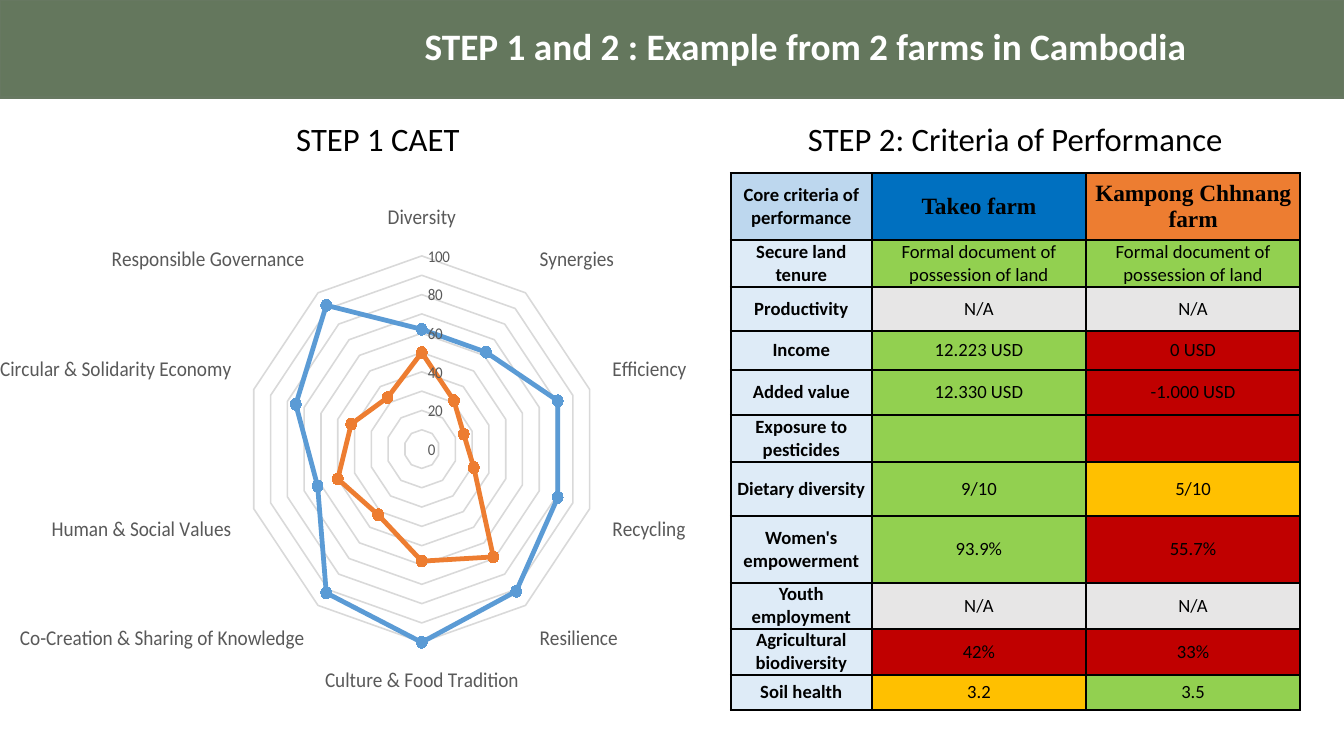
from dataclasses import dataclass

from lxml import etree
from pptx import Presentation
from pptx import util as u
from pptx.chart import data as chart_data
from pptx.dml.color import RGBColor
from pptx.enum import chart as charts, shapes, text
from pptx.oxml import parse_xml
from pptx.oxml.ns import nsdecls, qn


@dataclass(frozen=True)
class Theme:
    font: str = "Calibri"
    farm_font: str = "Times New Roman"
    title: float = 16
    heading: float = 14
    farm: float = 10
    cell: float = 8
    category: float = 9
    scale: float = 7
    banner: str = "64775D"
    banner_edge: str = "677861"
    white: str = "FFFFFF"
    black: str = "000000"
    label: str = "595959"
    grid: str = "D9D9D9"
    blue: str = "5B9BD5"
    orange: str = "ED7D31"
    corner: str = "BDD7EE"
    criterion: str = "DEEBF7"
    takeo: str = "0070C0"
    good: str = "92D050"
    medium: str = "FFC000"
    poor: str = "C00000"
    missing: str = "E7E6E6"


THEME = Theme()
COLUMNS, ROWS = 80, 45
CELL = u.Inches(0.1)

CRITERIA = [
    ("Secure land tenure", 2.8, "Formal document of possession of land", THEME.good,
     "Formal document of possession of land", THEME.good),
    ("Productivity", 2.6, "N/A", THEME.missing, "N/A", THEME.missing),
    ("Income", 2.3, "12.223 USD", THEME.good, "0 USD", THEME.poor),
    ("Added value", 2.7, "12.330 USD", THEME.good, "-1.000 USD", THEME.poor),
    ("Exposure to pesticides", 2.8, "", THEME.good, "", THEME.poor),
    ("Dietary diversity", 3.2, "9/10", THEME.good, "5/10", THEME.medium),
    ("Women's empowerment", 4, "93.9%", THEME.good, "55.7%", THEME.poor),
    ("Youth employment", 2.5, "N/A", THEME.missing, "N/A", THEME.missing),
    ("Agricultural biodiversity", 2.6, "42%", THEME.poor, "33%", THEME.poor),
    ("Soil health", 2.1, "3.2", THEME.medium, "3.5", THEME.good),
]

CAET = {
    "Diversity": (62, 50),
    "Synergies": (62, 31),
    "Efficiency": (81, 25),
    "Recycling": (81, 31),
    "Resilience": (91, 69),
    "Culture & Food Tradition": (100, 58),
    "Co-Creation & Sharing of Knowledge": (92, 42),
    "Human & Social Values": (62, 50),
    "Circular & Solidarity Economy": (75, 42),
    "Responsible Governance": (92, 33),
}


def grid(*steps):
    return [int(step * CELL) for step in steps]


def rgb(value):
    return RGBColor.from_string(value)


def paint(fill, color):
    fill.solid()
    fill.fore_color.rgb = rgb(color)


def stroke(line, color, width):
    line.color.rgb = rgb(color)
    line.width = u.Pt(width)


def style(font, size, color, bold=False, name=THEME.font):
    font.name, font.size, font.bold = name, u.Pt(size), bold
    font.color.rgb = rgb(color)


def add_banner(page):
    banner = page.shapes.add_shape(shapes.MSO_SHAPE.RECTANGLE, *grid(0, 0, COLUMNS, 5.8))
    banner.shadow.inherit = False
    paint(banner.fill, THEME.banner)
    stroke(banner.line, THEME.banner_edge, 1)


def add_label(page, place, words, size, color, bold=False, centered=False):
    box = page.shapes.add_textbox(*grid(*place))
    frame = box.text_frame
    frame.word_wrap = not centered
    frame.text = words
    para = frame.paragraphs[0]
    if centered:
        para.alignment = text.PP_ALIGN.CENTER
    style(para.runs[0].font, size, color, bold)


def add_borders(cell):
    props = cell._tc.get_or_add_tcPr()
    for side in ("lnL", "lnR", "lnT", "lnB"):
        edge = etree.SubElement(props, qn(f"a:{side}"), w=str(u.Pt(1)))
        fill = etree.SubElement(edge, qn("a:solidFill"))
        etree.SubElement(fill, qn("a:srgbClr"), val=THEME.black)


def fill_cell(cell, words, color, size=THEME.cell, bold=False, name=THEME.font):
    add_borders(cell)
    paint(cell.fill, color)
    cell.margin_left = cell.margin_right = u.Inches(0.01)
    cell.margin_top = cell.margin_bottom = 0
    cell.vertical_anchor = text.MSO_ANCHOR.MIDDLE
    cell.text = words
    para = cell.text_frame.paragraphs[0]
    para.alignment = text.PP_ALIGN.CENTER
    para._p.get_or_add_endParaRPr().set("sz", str(size * 100))
    for span in para.runs:
        style(span.font, size, THEME.black, bold, name)


def add_criteria_table(page):
    widths = grid(8.4, 12.75, 12.75)
    heights = grid(4, *(row[1] for row in CRITERIA))
    table = page.shapes.add_table(len(heights), len(widths), *grid(43.5, 10.3),
                                  sum(widths), sum(heights)).table
    for column, width in zip(table.columns, widths):
        column.width = width
    for row, height in zip(table.rows, heights):
        row.height = height
    fill_cell(table.cell(0, 0), "Core criteria of performance", THEME.corner, bold=True)
    farms = [("Takeo farm", THEME.takeo), ("Kampong Chhnang farm", THEME.orange)]
    for column, (farm, color) in enumerate(farms, 1):
        fill_cell(table.cell(0, column), farm, color, THEME.farm, True, THEME.farm_font)
    for row, (name, _, takeo, takeo_color, kampong, kampong_color) in enumerate(CRITERIA, 1):
        fill_cell(table.cell(row, 0), name, THEME.criterion, bold=True)
        fill_cell(table.cell(row, 1), takeo, takeo_color)
        fill_cell(table.cell(row, 2), kampong, kampong_color)


def place_plot(chart, left, top, width, height):
    area = chart._chartSpace.chart.plotArea
    for old in area.findall(qn("c:layout")):
        area.remove(old)
    area.insert(0, parse_xml(
        f'<c:layout {nsdecls("c")}><c:manualLayout><c:layoutTarget val="inner"/>'
        '<c:xMode val="edge"/><c:yMode val="edge"/>'
        f'<c:x val="{left}"/><c:y val="{top}"/><c:w val="{width}"/><c:h val="{height}"/>'
        '</c:manualLayout></c:layout>'))


def style_axes(chart):
    categories, scale = chart.category_axis, chart.value_axis
    for axis, size in ((categories, THEME.category), (scale, THEME.scale)):
        axis.major_tick_mark = axis.minor_tick_mark = charts.XL_TICK_MARK.NONE
        style(axis.tick_labels.font, size, THEME.label)
    categories.has_major_gridlines = False
    stroke(categories.format.line, THEME.grid, 0.75)
    scale.minimum_scale, scale.maximum_scale, scale.major_unit = 0, 100, 10
    scale.has_major_gridlines = True
    stroke(scale.major_gridlines.format.line, THEME.grid, 0.75)
    scale.format.line.fill.background()


def add_caet_chart(page):
    scores = chart_data.CategoryChartData()
    scores.categories = list(CAET)
    for number, values in enumerate(zip(*CAET.values()), 1):
        scores.add_series(f"Series {number}", values)
    chart = page.shapes.add_chart(charts.XL_CHART_TYPE.RADAR_MARKERS,
                                  *grid(0, 6.3, 45.1, 39.7), scores).chart
    chart.has_legend = chart.has_title = False
    style(chart.font, 10, THEME.black)
    place_plot(chart, 0.26, 0.22, 0.51, 0.59)
    style_axes(chart)
    plot = chart.plots[0]
    plot.vary_by_categories = False
    for series, color in zip(plot.series, (THEME.blue, THEME.orange)):
        series.smooth = False
        stroke(series.format.line, color, 2.25)
        series.marker.style = charts.XL_MARKER_STYLE.CIRCLE
        series.marker.size = 5
        paint(series.marker.format.fill, color)
        stroke(series.marker.format.line, color, 0.75)


def main():
    deck = Presentation()
    deck.slide_width, deck.slide_height = grid(COLUMNS, ROWS)
    page = deck.slides.add_slide(deck.slide_layouts[6])
    add_banner(page)
    add_criteria_table(page)
    add_caet_chart(page)
    add_label(page, (24.3, 0.9, 67.3, 3.7), "STEP 1 and 2 : Example from 2 farms in Cambodia",
              THEME.title, THEME.white, bold=True)
    add_label(page, (16.6, 6.6, 11.8, 3.4), "STEP 1 CAET",
              THEME.heading, THEME.black, centered=True)
    add_label(page, (47, 6.6, 26.9, 3.4), "STEP 2: Criteria of Performance",
              THEME.heading, THEME.black, centered=True)
    deck.save("out.pptx")


if __name__ == "__main__":
    main()
